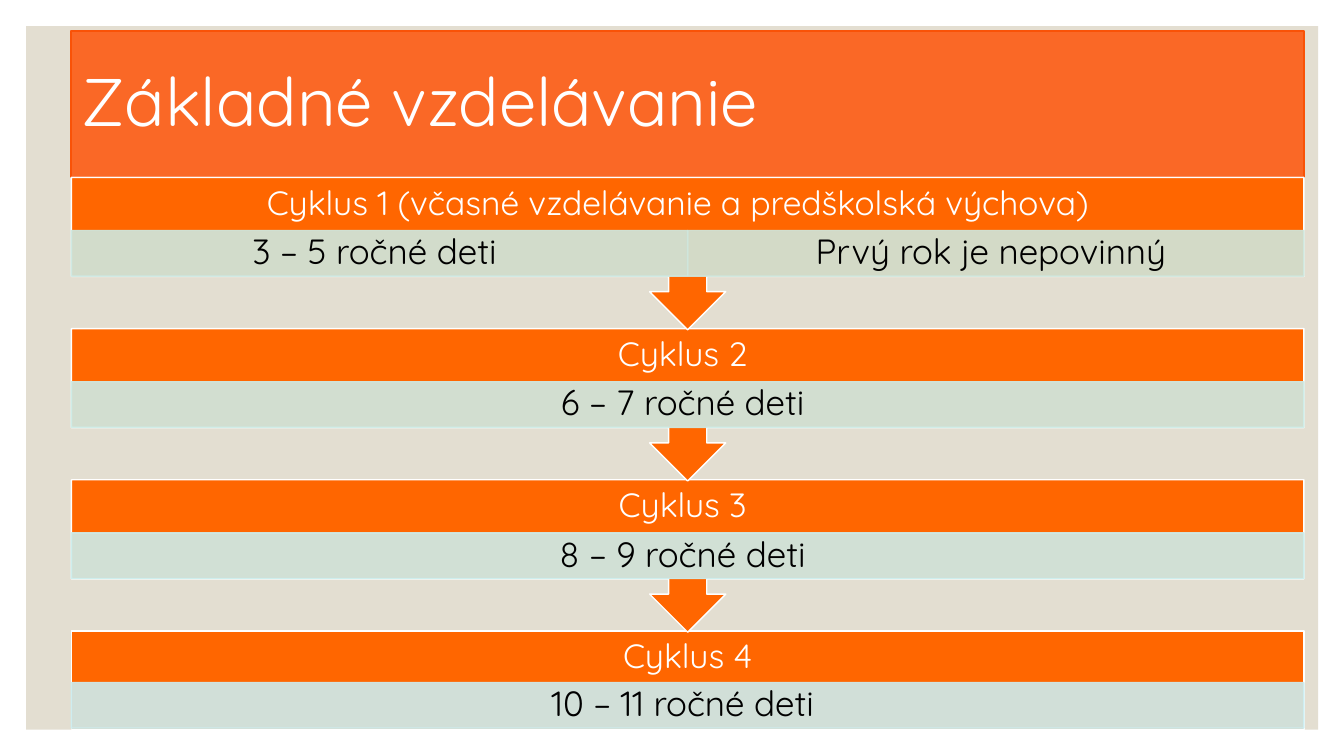
from lxml import etree
from pptx import Presentation
from pptx.dml.color import RGBColor
from pptx.enum.shapes import MSO_SHAPE
from pptx.enum.text import MSO_ANCHOR, MSO_AUTO_SIZE, PP_ALIGN
from pptx.oxml.ns import qn
from pptx.util import Cm, Pt

RECTANGLE = MSO_SHAPE.RECTANGLE
CALLOUT = MSO_SHAPE.UP_ARROW_CALLOUT
MIDDLE = MSO_ANCHOR.MIDDLE
NO_AUTOFIT = MSO_AUTO_SIZE.NONE
LEFT, CENTER = PP_ALIGN.LEFT, PP_ALIGN.CENTER

WHITE = RGBColor(0xFF, 0xFF, 0xFF)
BLACK = RGBColor(0x00, 0x00, 0x00)
SAND = RGBColor(0xE3, 0xDE, 0xD1)
TITLE_FILL = RGBColor(0xFA, 0x68, 0x26)
TITLE_LINE = RGBColor(0xF9, 0x52, 0x07)
ORANGE = RGBColor(0xFF, 0x66, 0x00)
MINT_1 = RGBColor(0xCE, 0xE9, 0xE2)
MINT_2 = RGBColor(0xCF, 0xE7, 0xDD)
MINT_3 = RGBColor(0xCE, 0xEC, 0xE7)
MINT_4 = RGBColor(0xCD, 0xEE, 0xED)
MINT_5 = RGBColor(0xCD, 0xED, 0xF0)

EDGE, WIDTH = 1.8, 31.06
FIRST_TOP, STEP = 4.47, 3.81
CALLOUT_HEIGHT, LAST_HEIGHT = 3.84, 2.49
LABEL_HEIGHT, BAND_HEIGHT = 1.35, 1.15
BAND_OFFSET, LAST_BAND_OFFSET = 1.34, 1.3
INSET, BAND_NUDGE = 0.48, 0.25

CYCLES = [
    ("Cyklus 1 (včasné vzdelávanie a predškolská výchova)", 0.5,
     [("3 – 5 ročné deti", MINT_1), ("Prvý rok je nepovinný", MINT_2)]),
    ("Cyklus 2", 0.25, [("6 – 7 ročné deti", MINT_3)]),
    ("Cyklus 3", 0.25, [("8 – 9 ročné deti", MINT_4)]),
    ("Cyklus 4", 0, [("10 – 11 ročné deti", MINT_5)]),
]


def write(shape, text, size, color, align=CENTER, insets=None):
    frame = shape.text_frame
    frame.word_wrap = True
    frame.auto_size = NO_AUTOFIT
    frame.vertical_anchor = MIDDLE
    if insets:
        (frame.margin_left, frame.margin_top,
         frame.margin_right, frame.margin_bottom) = [Cm(inset) for inset in insets]
    para = frame.paragraphs[0]
    para.alignment = align
    para.line_spacing = 0.9
    span = para.add_run()
    span.text = text
    span.font.name = "Quicksand"
    span.font.size = Pt(size)
    span.font.color.rgb = color


def paint(shape, fill, line=None, width=1):
    shape.shadow.inherit = False
    shape.fill.solid()
    shape.fill.fore_color.rgb = fill
    if line is None:
        shape.line.fill.background()
    else:
        shape.line.color.rgb = line
        shape.line.width = Pt(width)


class CycleSlide:
    def __init__(self, deck):
        self.slide = deck.slides.add_slide(deck.slide_layouts[5])
        self.shapes = self.slide.shapes

    def box(self, kind, left, top, width, height, fill, line=None):
        shape = self.shapes.add_shape(kind, Cm(left), Cm(top), Cm(width), Cm(height))
        paint(shape, fill, line)
        return shape

    def panel(self):
        panel = self.box(RECTANGLE, 0.66, 0.66, 32.56, 17.73, SAND)
        self.shapes.title.element.addprevious(panel.element)

    def title(self, text):
        title = self.shapes.title
        title.left, title.top = Cm(EDGE), Cm(0.79)
        title.width, title.height = Cm(WIDTH), Cm(3.68)
        paint(title, TITLE_FILL, TITLE_LINE, 1.5)
        write(title, text, 48, WHITE, align=LEFT)

    def label(self, text, top, nudge):
        label = self.shapes.add_textbox(Cm(EDGE), Cm(top), Cm(WIDTH), Cm(LABEL_HEIGHT))
        write(label, text, 24, WHITE, insets=(INSET, 0, INSET + nudge, 0))

    def band(self, text, left, top, width, color):
        band = self.box(RECTANGLE, left, top, width, BAND_HEIGHT, color, color)
        for tint in band.element.spPr.iter(qn("a:srgbClr")):
            etree.SubElement(tint, qn("a:alpha"), val="90000")
        write(band, text, 25, BLACK, insets=(INSET, 0.08, INSET + BAND_NUDGE, 0.08))

    def cycle(self, index, name, nudge, bands):
        top = FIRST_TOP + index * STEP
        if index == len(CYCLES) - 1:
            offset = LAST_BAND_OFFSET
            self.box(RECTANGLE, EDGE, top, WIDTH, LAST_HEIGHT, ORANGE, WHITE)
        else:
            offset = BAND_OFFSET
            callout = self.box(CALLOUT, EDGE, top, WIDTH, CALLOUT_HEIGHT, ORANGE, WHITE)
            callout.rotation = 180
        self.label(name, top, nudge)
        width = WIDTH / len(bands)
        for column, (text, color) in enumerate(bands):
            self.band(text, EDGE + column * width, top + offset, width, color)


def main():
    deck = Presentation()
    deck.slide_width, deck.slide_height = Cm(33.87), Cm(19.05)
    page = CycleSlide(deck)
    page.panel()
    page.title("Základné vzdelávanie")
    for index, cycle in reversed(list(enumerate(CYCLES))):
        page.cycle(index, *cycle)
    deck.save("out.pptx")


if __name__ == "__main__":
    main()
